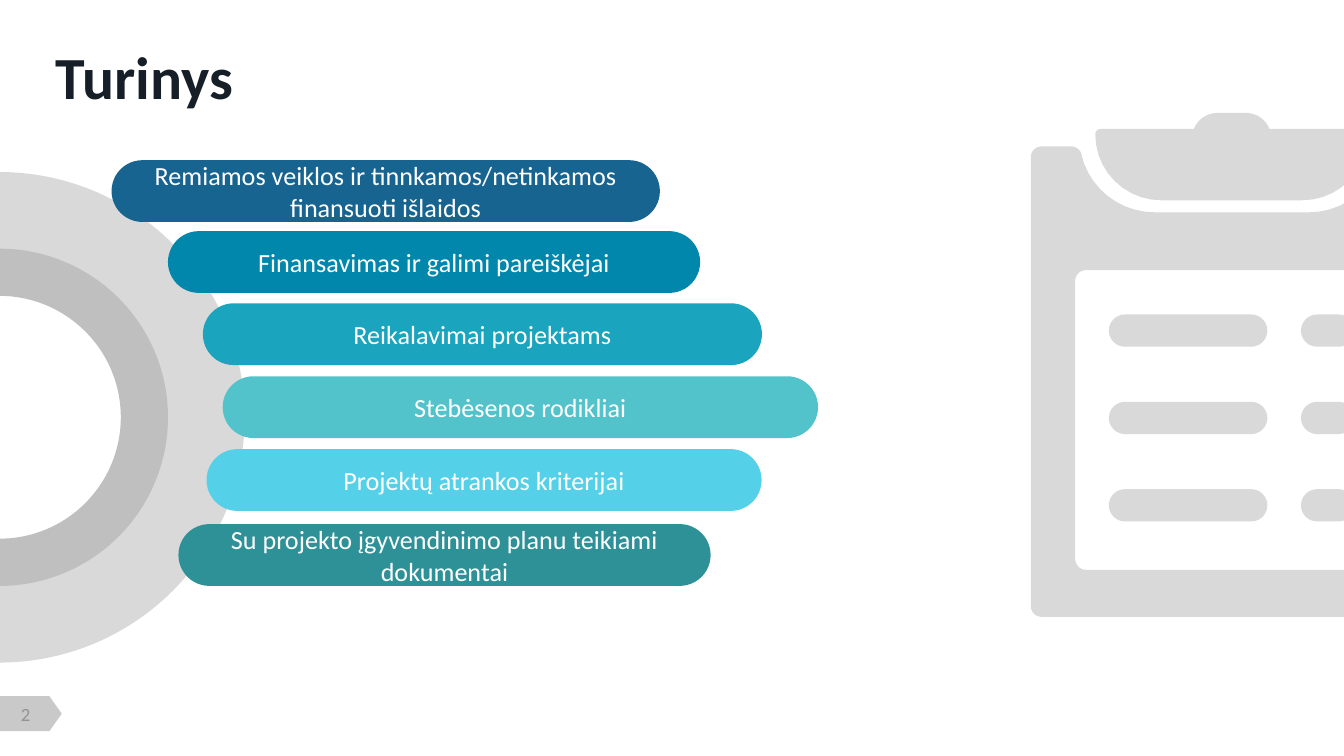
from math import cos, radians, sin

from pptx import Presentation
from pptx import util as u
from pptx.dml.color import RGBColor
from pptx.enum import shapes, text

COLS, ROWS = 100, 56.25
CELL = u.Inches(0.1)
FONT = "Calibri"
GREY = "D9D9D9"
SHAPE = shapes.MSO_SHAPE
AXIS = 91.65

TOPICS = [
    (8.3, 11.92, 40.8, "176490", "Remiamos veiklos ir tinnkamos/netinkamos finansuoti išlaidos"),
    (12.5, 17.2, 39.6, "0187AC", "Finansavimas ir galimi pareiškėjai"),
    (15.1, 22.57, 41.6, "1AA4BE", "Reikalavimai projektams"),
    (16.57, 28, 44.3, "52C3CB", "Stebėsenos rodikliai"),
    (15.37, 33.42, 41.3, "54D0E8", "Projektų atrankos kriterijai"),
    (13.28, 39, 39.6, "2E9198", "Su projekto įgyvendinimo planu teikiami dokumentai"),
]


def cells(*values):
    return [round(v * CELL) for v in values]


def color(value):
    return RGBColor.from_string(value)


def paint(sp, fill):
    sp.shadow.inherit = False
    sp.fill.solid()
    sp.fill.fore_color.rgb = color(fill)
    sp.line.fill.background()


def write(tf, content, size, ink, align, bold=False):
    tf.word_wrap = True
    tf.vertical_anchor = text.MSO_ANCHOR.MIDDLE
    p = tf.paragraphs[0]
    p.alignment = align
    r = p.add_run()
    r.text = content
    r.font.name = FONT
    r.font.size = u.Pt(size)
    r.font.bold = bold
    r.font.color.rgb = color(ink)


def add_preset(parent, kind, box, fill, adjustments=(), rotation=0):
    sp = parent.add_shape(kind, *cells(*box))
    for i, value in enumerate(adjustments):
        sp.adjustments[i] = value
    sp.rotation = rotation
    paint(sp, fill)
    return sp


def add_pill(parent, box, fill):
    return add_preset(parent, SHAPE.ROUNDED_RECTANGLE, box, fill, [0.5])


def arc(cx, cy, radius, start, end, steps=10):
    angles = [radians(start + (end - start) * i / steps) for i in range(steps + 1)]
    return [(cx + radius * cos(a), cy + radius * sin(a)) for a in angles]


def mirrored(half):
    return half + [(2 * AXIS - x, y) for x, y in reversed(half)]


def add_outline(parent, contours, fill):
    first, *others = [[cells(*point) for point in contour] for contour in contours]
    builder = parent.build_freeform(*first[0])
    builder.add_line_segments(first[1:], close=True)
    for contour in others:
        builder.move_to(*contour[0])
        builder.add_line_segments(contour[1:], close=True)
    paint(builder.convert_to_shape(), fill)


def add_title(s, content):
    sp = s.shapes.title
    sp.left, sp.top, sp.width, sp.height = cells(4.15, 3.7, 91.5, 3.9)
    tf = sp.text_frame
    tf.auto_size = text.MSO_AUTO_SIZE.NONE
    tf.margin_left = 0
    write(tf, content, 32, "161F28", text.PP_ALIGN.LEFT, True)


def add_page_number(s, number):
    add_preset(s.shapes, SHAPE.FLOWCHART_OFFPAGE_CONNECTOR,
               (1, 50.8, 2.6, 4.6), "C9C9C9", rotation=270)
    tf = s.shapes.add_textbox(*cells(0.25, 52.3, 3.3, 1.7)).text_frame
    tf.margin_left = tf.margin_right = tf.margin_top = tf.margin_bottom = 0
    write(tf, number, 10, "929292", text.PP_ALIGN.CENTER)


def add_rings(s):
    rings = s.shapes.add_group_shape().shapes
    for left, top, size, fill, width in [
        (-18.3, 12.8, 36.5, GREY, 0.25),
        (-12.6, 18.5, 25.1, "BFBFBF", 0.14),
    ]:
        add_preset(rings, SHAPE.BLOCK_ARC, (left, top, size, size), fill,
                   [108, 0, width], 90)


def add_clipboard(s):
    parts = s.shapes.add_group_shape().shapes
    clip = (arc(90.6, 10.3, 1.9, 270, 202) + arc(81.9, 10, 0.4, 270, 180)
            + arc(86.4, 10, 4.9, 180, 90))
    board = (arc(85.9, 10.2, 5.6, 90, 167) + arc(79.7, 11.7, 0.8, -10, -90)
             + arc(77.5, 11.7, 0.8, 270, 180) + arc(77.5, 45.1, 0.8, 180, 90))
    window = arc(80.8, 20.9, 0.8, 270, 180) + arc(80.8, 41.6, 0.8, 180, 90)
    add_outline(parts, [mirrored(clip)], GREY)
    for left, width in [(82.5, 11.8), (96.8, 4)]:
        for row in range(3):
            add_pill(parts, (left, 23.4 + 6.5 * row, width, 2.4), GREY)
    add_outline(parts, [mirrored(window), mirrored(board)], GREY)


def add_topics(s):
    for left, top, width, fill, label in TOPICS:
        sp = add_pill(s.shapes, (left, top, width, 4.6), fill)
        write(sp.text_frame, label, 14, "FFFFFF", text.PP_ALIGN.CENTER)


def main():
    prs = Presentation()
    prs.slide_width, prs.slide_height = cells(COLS, ROWS)
    s = prs.slides.add_slide(prs.slide_layouts[5])
    add_page_number(s, "2")
    add_title(s, "Turinys")
    add_rings(s)
    add_clipboard(s)
    add_topics(s)
    prs.save("out.pptx")


if __name__ == "__main__":
    main()
